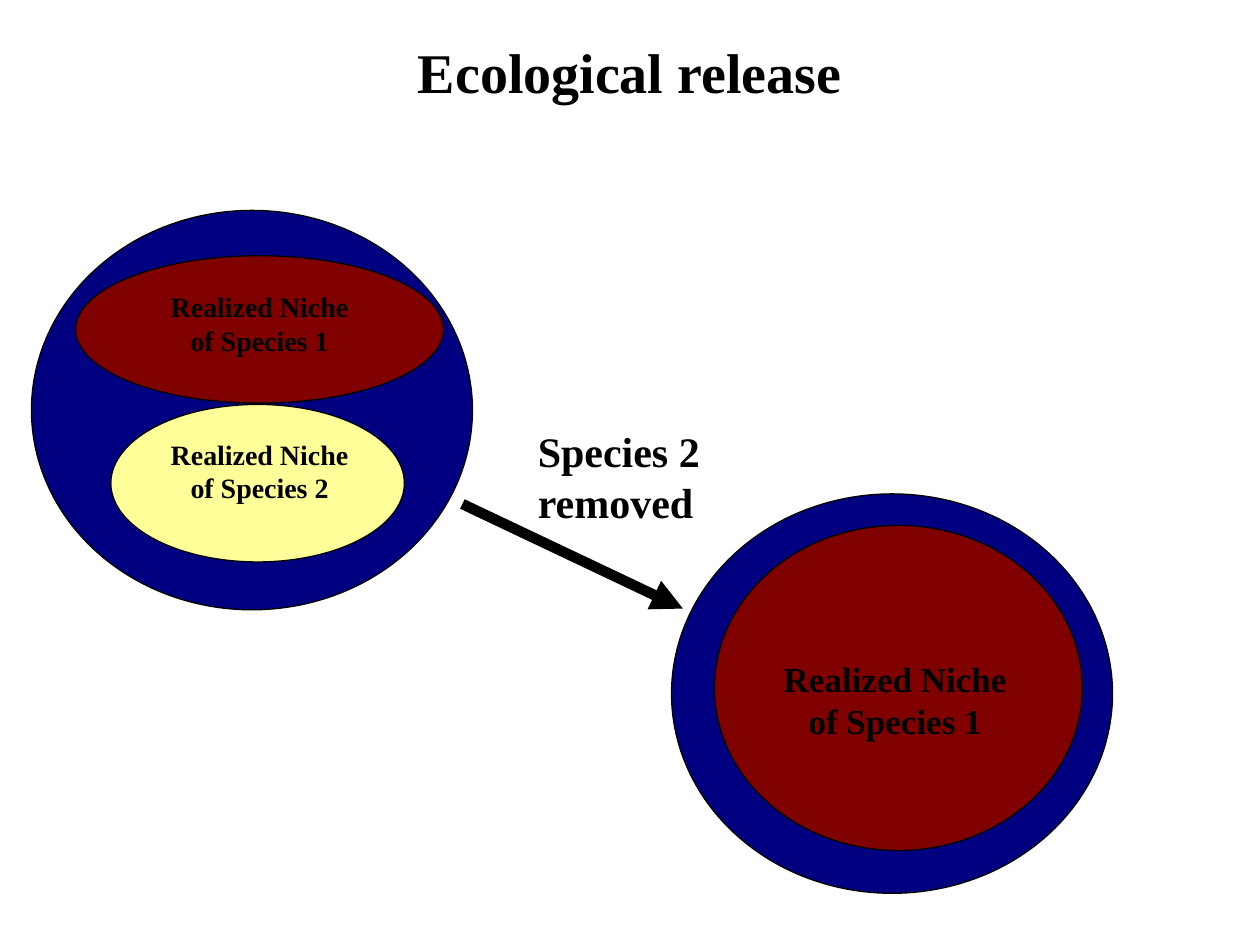
from pptx import Presentation
from pptx.dml.color import RGBColor
from pptx.enum.shapes import MSO_CONNECTOR, MSO_SHAPE
from pptx.enum.text import MSO_ANCHOR, MSO_AUTO_SIZE, PP_ALIGN
from pptx.oxml.ns import qn
from pptx.util import Inches, Pt
from lxml import etree

BLACK = RGBColor(0x00, 0x00, 0x00)
NAVY = RGBColor(0x00, 0x00, 0x80)
MAROON = RGBColor(0x80, 0x00, 0x00)
YELLOW = RGBColor(0xFF, 0xFF, 0x99)
OVAL = MSO_SHAPE.OVAL
STRAIGHT = MSO_CONNECTOR.STRAIGHT
TOP = MSO_ANCHOR.TOP
GROW = MSO_AUTO_SIZE.SHAPE_TO_FIT_TEXT
LEFT, CENTER = PP_ALIGN.LEFT, PP_ALIGN.CENTER


def write(shape, lines, size, align, wrap):
    frame = shape.text_frame
    frame.text = "\n".join(lines)
    frame.word_wrap = wrap
    frame.auto_size = GROW
    frame.vertical_anchor = TOP
    look = {"name": "Times New Roman", "size": Pt(size), "bold": True}
    for para in frame.paragraphs:
        para.alignment = align
        for run in para.runs:
            for key, value in look.items():
                setattr(run.font, key, value)
            run.font.color.rgb = BLACK


def draw_oval(shapes, box, color):
    oval = shapes.add_shape(OVAL, *map(Inches, box))
    oval.shadow.inherit = False
    oval.fill.solid()
    oval.fill.fore_color.rgb = color
    oval.line.color.rgb = BLACK
    oval.line.width = Pt(0.75)


deck = Presentation()
deck.slide_width, deck.slide_height = Inches(10), Inches(7.5)
slide = deck.slides.add_slide(deck.slide_layouts[5])

# Title
title = slide.shapes.title
title.left, title.top = Inches(0), Inches(0.25)
title.width, title.height = Inches(10), Inches(0.63)
write(title, ["Ecological release"], 32, CENTER, True)

# Niches before removal
before = [
    ((0.25, 1.67, 3.5, 3.17), NAVY),
    ((0.6, 2.03, 2.92, 1.17), MAROON),
    ((0.88, 3.21, 2.33, 1.25), YELLOW),
]
for box, color in before:
    draw_oval(slide.shapes, box, color)

# Removal arrow
arrow = slide.shapes.add_connector(
    STRAIGHT, Inches(3.67), Inches(4), Inches(5.42), Inches(4.83))
arrow.line.color.rgb = BLACK
arrow.line.width = Pt(6)
etree.SubElement(arrow.line._get_or_add_ln(), qn("a:tailEnd"), type="triangle")
etree.SubElement(arrow._element.spPr, qn("a:effectLst"))

# Niches after removal
after = [
    ((5.33, 3.92, 3.5, 3.17), NAVY),
    ((5.67, 4.17, 2.92, 2.58), MAROON),
]
group = slide.shapes.add_group_shape()
for box, color in after:
    draw_oval(group.shapes, box, color)

# Labels
labels = [
    ((1.25, 2.25, 1.62, 0.64), ["Realized Niche", "of Species 1"], 16, CENTER),
    ((1.25, 3.42, 1.62, 0.64), ["Realized Niche", "of Species 2"], 16, CENTER),
    ((6.12, 5.17, 1.97, 0.77), ["Realized Niche", "of Species 1"], 20, CENTER),
    ((4.17, 3.33, 1.5, 0.91), ["Species 2", "removed"], 24, LEFT),
]
for box, lines, size, align in labels:
    label = slide.shapes.add_textbox(*map(Inches, box))
    write(label, lines, size, align, False)

deck.save("out.pptx")
